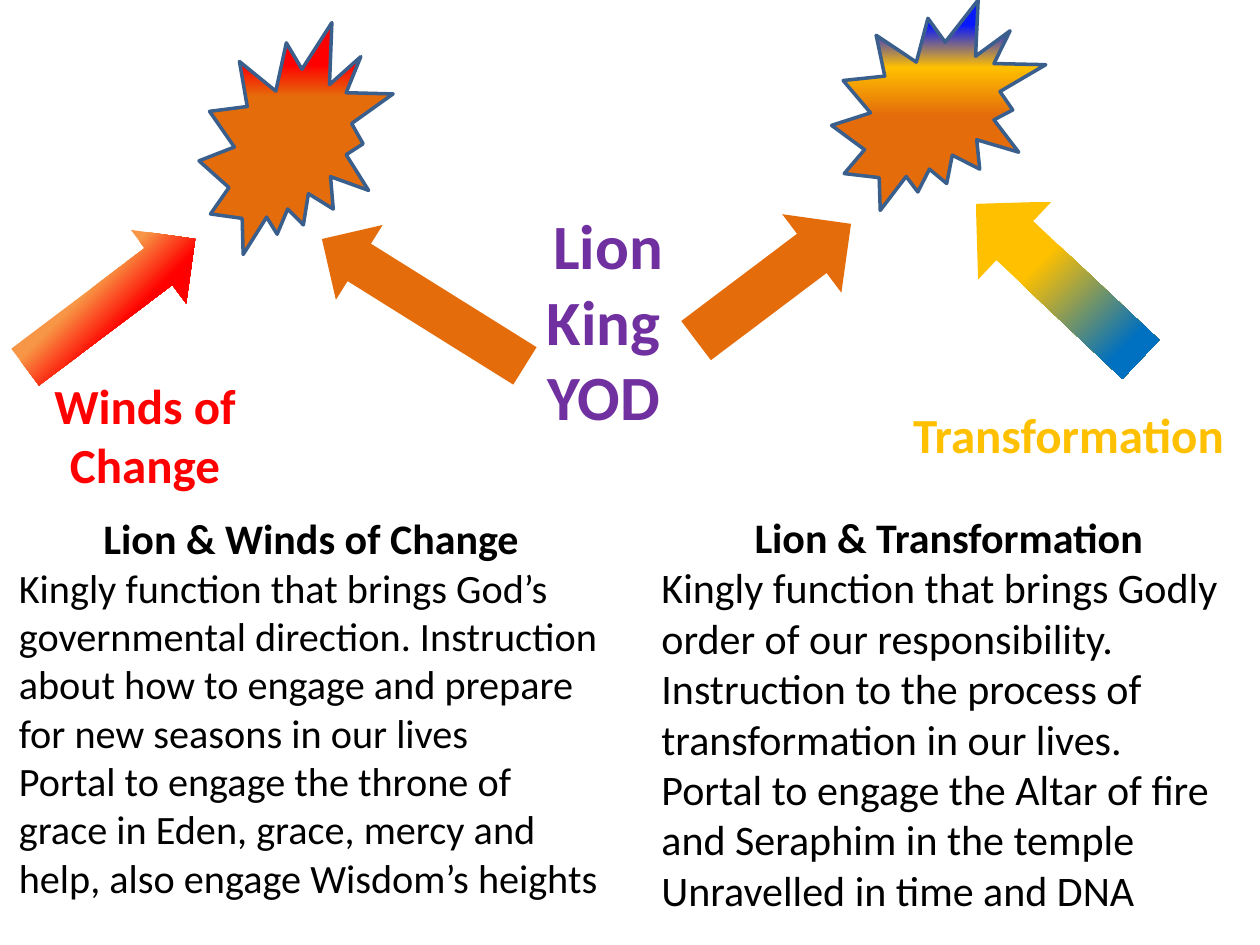
from pptx import Presentation
from pptx.dml.color import RGBColor
from pptx.enum.shapes import MSO_SHAPE
from pptx.enum.text import PP_ALIGN
from pptx.oxml import parse_xml
from pptx.oxml.ns import nsdecls
from pptx.util import Inches, Pt

BLACK = RGBColor(0x00, 0x00, 0x00)
PURPLE = RGBColor(0x70, 0x30, 0xA0)
RED = RGBColor(0xFF, 0x00, 0x00)
GOLD = RGBColor(0xFF, 0xC0, 0x00)
ORANGE = RGBColor(0xE4, 0x6C, 0x0A)
LIGHT_ORANGE = RGBColor(0xF7, 0x96, 0x46)
BLUE = RGBColor(0x00, 0x70, 0xC0)
BRIGHT_BLUE = RGBColor(0x08, 0x19, 0xFB)
OUTLINE = RGBColor(0x3A, 0x5F, 0x8C)

DOWNWARD = '<a:lin ang="5400000" scaled="0"/>'
FROM_CORNER = '<a:path path="circle"><a:fillToRect l="100000" t="100000"/></a:path>'


def add_span(para, text, size, color, bold):
    span = para.add_run()
    span.text = text
    span.font.name = "Calibri"
    span.font.size = Pt(size)
    span.font.color.rgb = color
    span.font.bold = bold


def add_text(page, frame, paragraphs):
    box = page.shapes.add_textbox(*map(Inches, frame))
    text_frame = box.text_frame
    text_frame.word_wrap = True
    text_frame.margin_left = text_frame.margin_right = 0
    text_frame.margin_top = text_frame.margin_bottom = 0
    for index, (alignment, spans) in enumerate(paragraphs):
        para = text_frame.add_paragraph() if index else text_frame.paragraphs[0]
        para.alignment = alignment
        for span in spans:
            add_span(para, *span)


def add_label(page, frame, text, color):
    add_text(page, frame, [(PP_ALIGN.CENTER, [(text, 28, color, True)])])


def add_description(page, frame, heading, body, size):
    heading_para = (PP_ALIGN.CENTER, [(heading, 24, BLACK, True)])
    body_paras = [(PP_ALIGN.LEFT, [(text, size, BLACK, False)]) for text in body]
    add_text(page, frame, [heading_para, *body_paras])


def set_gradient(shape, stops, direction):
    stop_list = "".join(
        f'<a:gs pos="{position * 1000}"><a:srgbClr val="{color}"/></a:gs>'
        for position, color in stops
    )
    gradient = parse_xml(
        f'<a:gradFill {nsdecls("a")} rotWithShape="0">'
        f"<a:gsLst>{stop_list}</a:gsLst>{direction}</a:gradFill>"
    )
    shape.fill.background()
    properties = shape.fill._xPr
    properties.replace(properties.eg_fillProperties, gradient)


def add_arrow(page, frame, rotation, color=None, stops=None):
    arrow = page.shapes.add_shape(MSO_SHAPE.RIGHT_ARROW, *map(Inches, frame))
    arrow.shadow.inherit = False
    arrow.rotation = rotation
    arrow.line.fill.background()
    if stops:
        set_gradient(arrow, stops, FROM_CORNER)
    else:
        arrow.fill.solid()
        arrow.fill.fore_color.rgb = color


def add_burst(page, frame, stops):
    burst = page.shapes.add_shape(MSO_SHAPE.EXPLOSION2, *map(Inches, frame))
    burst.shadow.inherit = False
    set_gradient(burst, stops, DOWNWARD)
    burst.line.color.rgb = OUTLINE
    burst.line.width = Pt(2)


def main():
    deck = Presentation()
    deck.slide_width = Inches(10)
    deck.slide_height = Inches(7.5)
    page = deck.slides.add_slide(deck.slide_layouts[6])

    title = [[(word, 36, PURPLE, True)] for word in ("Lion", "King", "YOD")]
    title[0].insert(0, (" ", 24, BLACK, False))
    add_text(page, (4.12, 1.64, 1.34, 1.56),
             [(PP_ALIGN.CENTER, spans) for spans in title])

    add_label(page, (0.19, 2.98, 1.92, 0.85), "Winds of Change", RED)
    add_label(page, (7.2, 3.21, 2.56, 0.4), "Transformation", GOLD)

    add_description(page, (0.15, 4.07, 4.64, 3.44), "Lion & Winds of Change", [
        "Kingly function that brings God’s governmental direction. Instruction "
        "about how to engage and prepare for new seasons in our lives",
        "Portal to engage the throne of grace in Eden, grace, mercy and help, "
        "also engage Wisdom’s heights",
    ], 23)
    add_description(page, (5.25, 4.06, 4.56, 3.32), "Lion & Transformation", [
        "Kingly function that brings Godly order of our responsibility. "
        "Instruction to the process of transformation in our lives.",
        "Portal to engage the Altar of fire and Seraphim in the temple "
        "Unravelled in time and DNA",
    ], 24)

    add_arrow(page, (5.37, 1.85, 1.54, 0.78), 323, ORANGE)
    add_arrow(page, (7.5, 1.81, 1.8, 0.85), 223.3, stops=[(22, BLUE), (58, GOLD)])
    add_burst(page, (6.6, 0, 1.7, 1.67),
              [(12, BRIGHT_BLUE), (32, GOLD), (55, ORANGE)])
    add_arrow(page, (0.03, 2.04, 1.69, 0.73), 323,
              stops=[(42, RED), (58, LIGHT_ORANGE)])
    add_arrow(page, (2.41, 2.05, 1.9, 0.7), 212, ORANGE)
    add_burst(page, (1.58, 0.18, 1.54, 1.84),
              [(18, RED), (32, ORANGE), (54, ORANGE)])

    deck.save("out.pptx")


if __name__ == "__main__":
    main()
